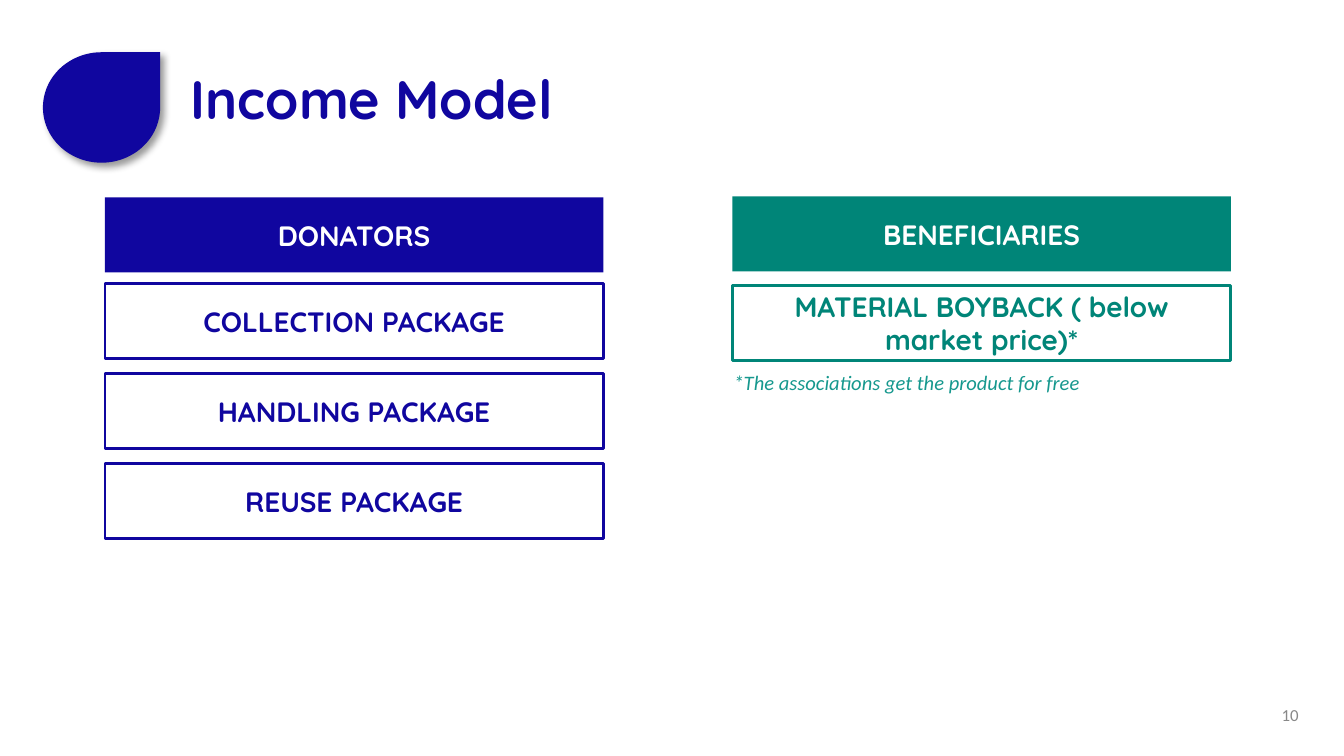
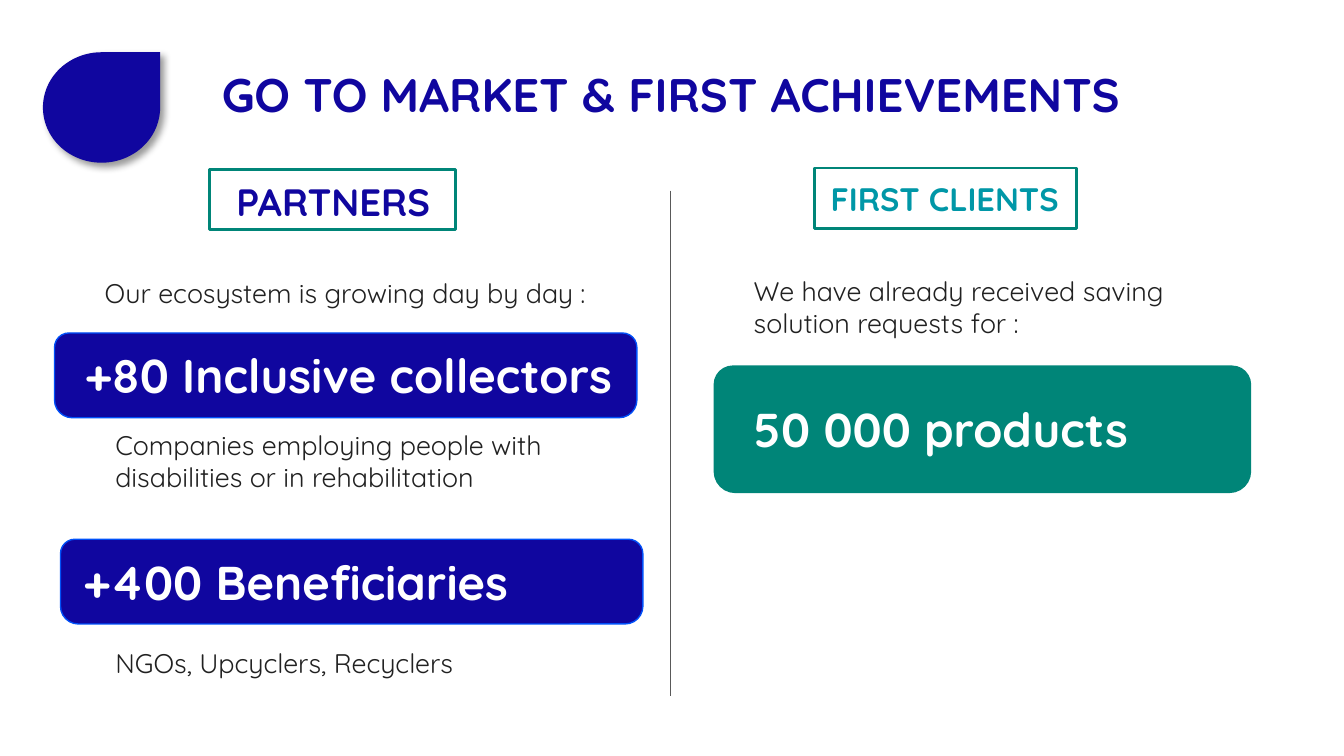
from dataclasses import dataclass
from typing import Optional

from lxml.etree import SubElement
from pptx import Presentation
from pptx.dml.color import RGBColor
from pptx.enum.shapes import MSO_CONNECTOR, MSO_SHAPE as Preset
from pptx.enum.text import MSO_ANCHOR as Anchor, MSO_AUTO_SIZE as AutoSize, PP_ALIGN as Align
from pptx.oxml.ns import qn
from pptx.util import Pt

COLORS = {
    "navy": "10069F",
    "teal": "008578",
    "cyan": "0097A7",
    "note": "16988E",
    "edge": "0050F9",
    "ink": "212121",
    "rule": "595959",
    "number": "888888",
    "white": "FFFFFF",
    "black": "000000",
}
HEADING_FONT = "Quicksand"
NOTE_FONT = "Calibri"
TITLE_TOP, TITLE_HEIGHT = 28, 45.4
SLIDE_WIDTH, SLIDE_HEIGHT = 720, 405
PACKAGE_WIDTH, PACKAGE_HEIGHT, PACKAGE_PITCH = 267, 40.2, 48.2


@dataclass(frozen=True)
class Box:
    left: float
    top: float
    width: float
    height: float

    def lengths(self) -> tuple:
        return Pt(self.left), Pt(self.top), Pt(self.width), Pt(self.height)


@dataclass(frozen=True)
class PackageColumn:
    header: str
    packages: tuple
    color: str
    left: float
    header_top: float
    first_top: float


@dataclass(frozen=True)
class Label:
    text: str
    box: Box
    size: float = 14.4
    color: str = "ink"
    bold: bool = False
    align: Align = Align.LEFT


@dataclass(frozen=True)
class Banner:
    text: str
    box: Box
    text_box: Box
    fill: str
    line: Optional[str]
    corners: tuple


COLUMNS = (
    PackageColumn(
        "DONATORS",
        ("COLLECTION PACKAGE", "HANDLING PACKAGE", "REUSE PACKAGE"),
        "navy", 56.2, 105.8, 152,
    ),
    PackageColumn(
        "BENEFICIARIES",
        ("MATERIAL BOYBACK ( below market price)*",),
        "teal", 392.4, 105.2, 152.8,
    ),
)
FRAMES = (Box(436.3, 90, 140.4, 32.4), Box(112.3, 90.7, 131.8, 32.4))
LABELS = (
    Label("PARTNERS", Box(87.8, 88.6, 181.4, 24.5), 20.4, "navy", True, Align.CENTER),
    Label("FIRST CLIENTS", Box(415.4, 88.6, 181.4, 24.5), 17.4, "cyan", True, Align.CENTER),
    Label("Our ecosystem is growing day by day :", Box(49, 141, 286, 24.5)),
    Label("We have already received saving solution requests for :", Box(396.7, 139.7, 268.6, 183)),
    Label("Companies employing people with disabilities or in rehabilitation", Box(54.7, 222.5, 286, 24.5)),
    Label("NGOs, Upcyclers, Recyclers", Box(54.7, 339, 217.4, 24.5)),
)
BANNERS = (
    Banner("50 000 products", Box(382.3, 195.8, 288, 68.4), Box(396.7, 207.4, 311.8, 45.4),
           "teal", None, (0.15, 0.17)),
    Banner("+80 Inclusive collectors", Box(29.2, 178.4, 312, 45.4), Box(38.2, 178.4, 303, 45.4),
           "navy", "edge", (0.17, 0.21)),
    Banner("+400 Beneficiaries", Box(32.4, 288.9, 312, 45.4), Box(37.4, 288.9, 303, 45.4),
           "navy", "edge", (0.17, 0.21)),
)


def rgb(name: str) -> RGBColor:
    return RGBColor.from_string(COLORS[name])


def write(shape, text: str, *, size: float, color: str, font: str = HEADING_FONT,
          bold: bool = False, italic: bool = False, align: Align = Align.LEFT,
          anchor: Anchor = Anchor.TOP, insets: tuple = (7.2, 7.2)) -> None:
    frame = shape.text_frame
    frame.word_wrap = True
    frame.auto_size = AutoSize.NONE
    frame.vertical_anchor = anchor
    frame.margin_left = frame.margin_right = Pt(insets[0])
    frame.margin_top = frame.margin_bottom = Pt(insets[1])
    paragraph = frame.paragraphs[0]
    paragraph.alignment = align
    run = paragraph.add_run()
    run.text = text
    run.font.name = font
    run.font.size = Pt(size)
    run.font.bold = bold
    run.font.italic = italic
    run.font.color.rgb = rgb(color)


def add_text(slide, box: Box, text: str, **text_format) -> None:
    write(slide.shapes.add_textbox(*box.lengths()), text, **text_format)


def add_panel(slide, preset: Preset, box: Box, *, fill: Optional[str] = None,
              line: Optional[str] = None, line_width: float = 1.5, corners: tuple = ()):
    shape = slide.shapes.add_shape(preset, *box.lengths())
    shape.shadow.inherit = False
    for index, value in enumerate(corners):
        shape.adjustments[index] = value
    if fill:
        shape.fill.solid()
        shape.fill.fore_color.rgb = rgb(fill)
    else:
        shape.fill.background()
    if line:
        shape.line.color.rgb = rgb(line)
        shape.line.width = Pt(line_width)
    else:
        shape.line.fill.background()
    return shape


def add_drop(slide) -> None:
    drop = add_panel(slide, Preset.TEAR, Box(23, 28, 62.8, 59.2), fill="navy", corners=(1,))
    effects = drop._element.spPr.find(qn("a:effectLst"))
    shadow = SubElement(effects, qn("a:outerShdw"), blurRad=str(Pt(4)), dist=str(Pt(3)),
                        dir=str(45 * 60000), algn="bl", rotWithShape="0")
    tint = SubElement(shadow, qn("a:srgbClr"), val=COLORS["black"])
    SubElement(tint, qn("a:alpha"), val="40000")


def add_titled_slide(presentation, text: str, left: float, size: float):
    slide = presentation.slides.add_slide(presentation.slide_layouts.get_by_name("Title Only"))
    add_drop(slide)
    title = slide.shapes.title
    box = Box(left, TITLE_TOP, SLIDE_WIDTH - left, TITLE_HEIGHT)
    title.left, title.top, title.width, title.height = box.lengths()
    write(title, text, size=size, color="navy", bold=True)
    return slide


def add_package(slide, text: str, left: float, top: float, *, text_color: str,
                fill: Optional[str] = None, line: Optional[str] = None) -> None:
    box = Box(left, top, PACKAGE_WIDTH, PACKAGE_HEIGHT)
    package = add_panel(slide, Preset.RECTANGLE, box, fill=fill, line=line)
    write(package, text, size=15, color=text_color, bold=True,
          align=Align.CENTER, anchor=Anchor.MIDDLE)


def add_package_column(slide, column: PackageColumn) -> None:
    add_package(slide, column.header, column.left, column.header_top,
                text_color="white", fill=column.color)
    for index, package in enumerate(column.packages):
        add_package(slide, package, column.left, column.first_top + index * PACKAGE_PITCH,
                    text_color=column.color, line=column.color)


def add_banner(slide, banner: Banner) -> None:
    add_panel(slide, Preset.ROUND_2_SAME_RECTANGLE, banner.box, fill=banner.fill,
              line=banner.line, line_width=0.75, corners=banner.corners)
    add_text(slide, banner.text_box, banner.text, size=25.4, color="white", bold=True)


def add_divider(slide, x: float, top: float, bottom: float) -> None:
    divider = slide.shapes.add_connector(MSO_CONNECTOR.STRAIGHT, Pt(x), Pt(top), Pt(x), Pt(bottom))
    divider.line.color.rgb = rgb("rule")
    divider.line.width = Pt(0.75)
    SubElement(divider._element.spPr, qn("a:effectLst"))


def build_income_slide(presentation) -> None:
    slide = add_titled_slide(presentation, "Income Model", 95, 29)
    for column in COLUMNS:
        add_package_column(slide, column)
    add_text(slide, Box(388, 193, 247.7, 24.5), "*The associations get the product for free",
             size=11, color="note", font=NOTE_FONT, italic=True, insets=(5, 5))
    add_text(slide, Box(579, 375, 121.7, 16), "10", size=9, color="number", font=NOTE_FONT,
             align=Align.RIGHT, anchor=Anchor.MIDDLE, insets=(5, 3))


def build_market_slide(presentation) -> None:
    slide = add_titled_slide(presentation, "GO TO MARKET & FIRST ACHIEVEMENTS", 111.6, 25.2)
    for frame in FRAMES:
        add_panel(slide, Preset.RECTANGLE, frame, fill="white", line="teal")
    add_divider(slide, 359.3, 102.2, 373)
    for label in LABELS:
        add_text(slide, label.box, label.text, size=label.size, color=label.color,
                 bold=label.bold, align=label.align)
    for banner in BANNERS:
        add_banner(slide, banner)


def main() -> None:
    presentation = Presentation()
    presentation.slide_width = Pt(SLIDE_WIDTH)
    presentation.slide_height = Pt(SLIDE_HEIGHT)
    build_income_slide(presentation)
    build_market_slide(presentation)
    presentation.save("out.pptx")


if __name__ == "__main__":
    main()
